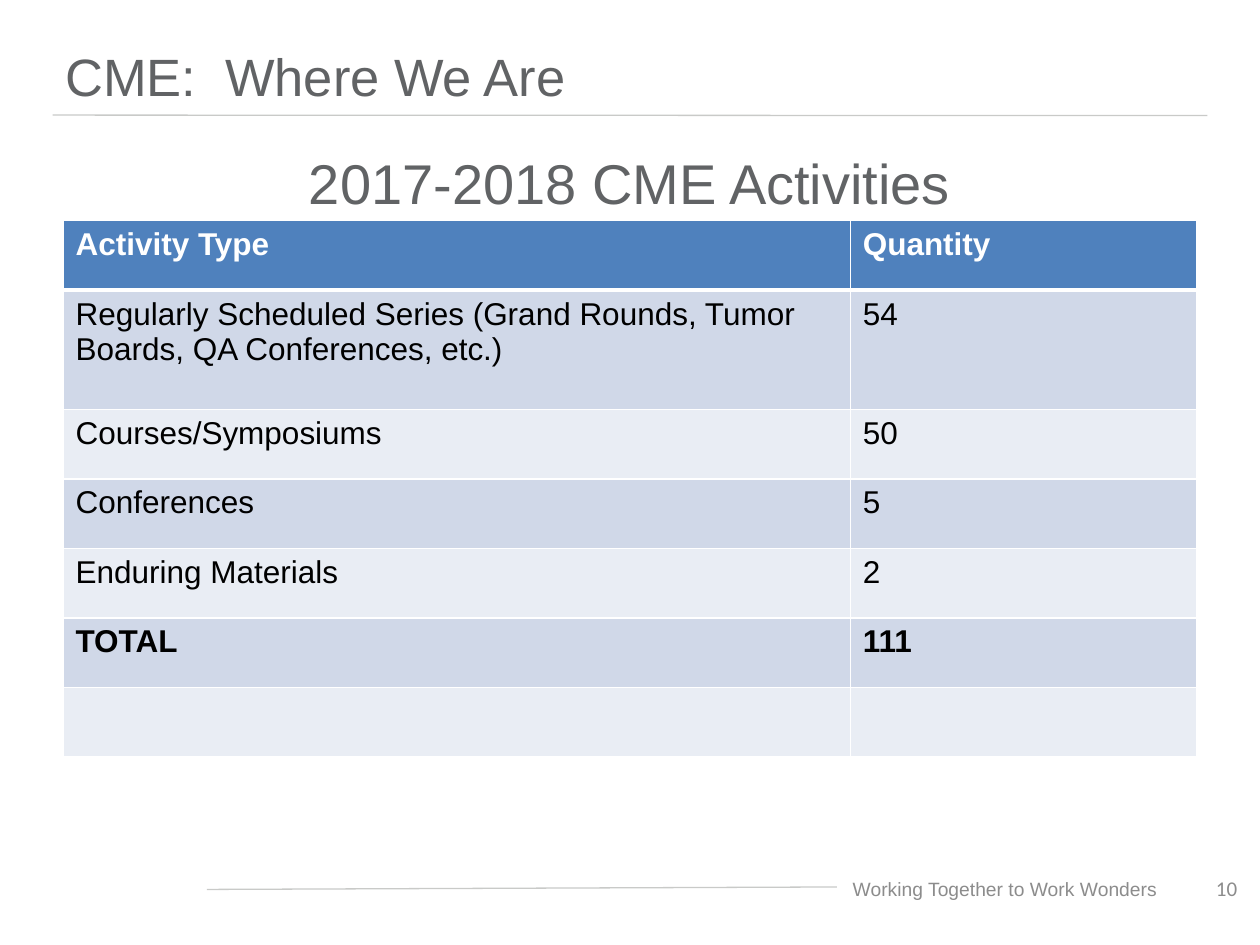
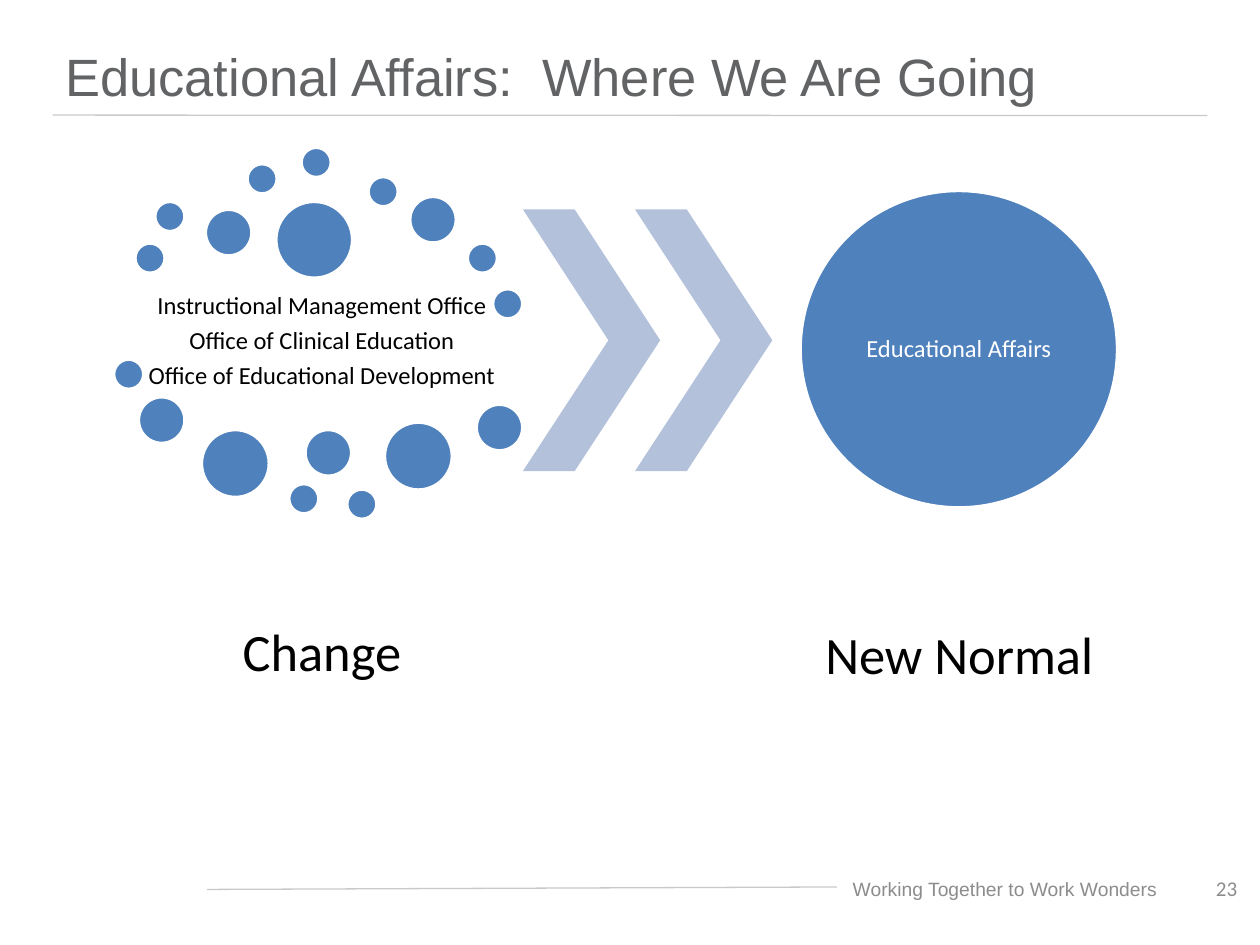
from lxml.etree import SubElement
from pptx import Presentation
from pptx.dml.color import RGBColor
from pptx.enum.shapes import MSO_CONNECTOR as Connector, MSO_SHAPE as Shape
from pptx.enum.text import MSO_ANCHOR as Anchor, MSO_AUTO_SIZE as AutoSize, PP_ALIGN as Align
from pptx.oxml.ns import qn
from pptx.util import Cm, Pt

WHITE = RGBColor(0xFF, 0xFF, 0xFF)
BLACK = RGBColor(0x00, 0x00, 0x00)
BLUE = RGBColor(0x4F, 0x81, 0xBD)
PALE_BLUE = RGBColor(0xB3, 0xC1, 0xDB)
DARK_BAND = RGBColor(0xD0, 0xD8, 0xE8)
LIGHT_BAND = RGBColor(0xE9, 0xED, 0xF4)
TITLE_GREY = RGBColor(0x61, 0x63, 0x65)
FOOTER_GREY = RGBColor(0x8C, 0x8C, 0x8C)
RULE_GREY = RGBColor(0xC9, 0xCA, 0xC8)


def write(frame, lines, size, color, font="Arial", align=Align.LEFT, bold=False):
    frame.word_wrap = True
    for index, line in enumerate(lines):
        para = frame.paragraphs[0] if index == 0 else frame.add_paragraph()
        para.alignment = align
        span = para.add_run()
        span.text = line
        span.font.name, span.font.size, span.font.bold = font, Pt(size), bold
        span.font.color.rgb = color


def add_disc(page, left, top, size):
    disc = page.shapes.add_shape(Shape.OVAL, Cm(left), Cm(top), Cm(size), Cm(size))
    disc.shadow.inherit = False
    disc.fill.solid()
    disc.fill.fore_color.rgb = BLUE
    disc.line.color.rgb = WHITE
    disc.line.width = Pt(2)


deck = Presentation()
deck.slide_width, deck.slide_height = Cm(25.4), Cm(19.05)

# Shared title, rules and footer
pages = []
for heading, number in [("CME:  Where We Are", "10"),
                        ("Educational Affairs:  Where We Are Going", "23")]:
    page = deck.slides.add_slide(deck.slide_layouts[5])
    pages.append(page)

    title = page.shapes.title
    title.left, title.top, title.width, title.height = Cm(1.06), Cm(0.64), Cm(23.28), Cm(1.27)
    title.text_frame.auto_size = AutoSize.NONE
    title.text_frame.vertical_anchor = Anchor.TOP
    title.text_frame.margin_top = Cm(0.25)
    write(title.text_frame, [heading], 30, TITLE_GREY)

    for x1, y1, x2, y2 in [(1.06, 2.32, 24.34, 2.33), (4.17, 17.93, 16.87, 17.88)]:
        rule = page.shapes.add_connector(Connector.STRAIGHT, Cm(x1), Cm(y1), Cm(x2), Cm(y2))
        rule.line.color.rgb = RULE_GREY
        rule.line.width = Pt(0.75)
        SubElement(rule._element.spPr, qn("a:effectLst"))

    for left, width, text, size, font, align in [
            (16.94, 7.82, "Working Together to Work Wonders", 11, "Arial", Align.LEFT),
            (23.29, 1.9, number, 12, "Calibri", Align.RIGHT)]:
        box = page.shapes.add_textbox(Cm(left), Cm(17.4), Cm(width), Cm(1.02))
        box.text_frame.vertical_anchor = Anchor.MIDDLE
        write(box.text_frame, [text], size, FOOTER_GREY, font, align)

activities_page, future_page = pages

# Activities: subtitle
subtitle = activities_page.shapes.add_textbox(Cm(1.27), Cm(2.74), Cm(22.86), Cm(3.18))
subtitle.text_frame.margin_top = Cm(0.25)
write(subtitle.text_frame, ["2017-2018 CME Activities"], 32, TITLE_GREY, align=Align.CENTER)

# Activities: table
activities = [
    ("Activity Type", "Quantity"),
    ("Regularly Scheduled Series (Grand Rounds, Tumor Boards, QA Conferences, etc.)", "54"),
    ("Courses/Symposiums", "50"),
    ("Conferences", "5"),
    ("Enduring Materials", "2"),
    ("TOTAL", "111"),
    ("", ""),
]
table = activities_page.shapes.add_table(
    len(activities), 2, Cm(1.27), Cm(4.45), Cm(22.86), Cm(10.8)).table
table.columns[0].width, table.columns[1].width = Cm(15.87), Cm(6.99)
for row, texts in enumerate(activities):
    table.rows[row].height = Cm(2.41 if row == 1 else 1.4)
    for column, text in enumerate(texts):
        cell = table.cell(row, column)
        properties = cell._tc.get_or_add_tcPr()
        for side in ("lnL", "lnR", "lnT", "lnB"):
            thick = (row, side) in [(0, "lnB"), (1, "lnT")]
            border = SubElement(properties, qn(f"a:{side}"), w=str(Pt(3 if thick else 1)))
            paint = SubElement(border, qn("a:solidFill"))
            SubElement(paint, qn("a:srgbClr"), val=str(WHITE))
        cell.fill.solid()
        cell.fill.fore_color.rgb = BLUE if row == 0 else DARK_BAND if row % 2 else LIGHT_BAND
        if text:
            write(cell.text_frame, [text], 18, WHITE if row == 0 else BLACK,
                  bold=row == 0 or texts[0] == "TOTAL")

# Future: scattered discs around the offices, grouped by diameter
scattered_discs = {
    0.61: [(2.72, 4.9), (3.12, 4.06), (4.98, 3.3), (6.07, 2.97), (7.42, 3.56),
           (9.42, 4.9), (9.93, 5.82), (2.29, 7.24), (5.82, 9.75), (6.99, 9.86)],
    0.94: [(4.14, 4.22), (8.26, 3.96), (2.79, 8), (6.15, 8.66), (9.6, 8.15)],
    1.37: [(4.06, 8.66), (7.75, 8.51)],
    1.55: [(5.56, 4.06)],
}
for size, places in scattered_discs.items():
    for left, top in places:
        add_disc(future_page, left, top, size)

# Future: chevrons leading to the single large disc
for left in (10.54, 12.8):
    chevron = future_page.shapes.add_shape(Shape.CHEVRON, Cm(left), Cm(4.22), Cm(2.77), Cm(5.28))
    chevron.adjustments[0] = 0.623
    chevron.shadow.inherit = False
    chevron.fill.solid()
    chevron.fill.fore_color.rgb = PALE_BLUE
    chevron.line.fill.background()
add_disc(future_page, 16.13, 3.84, 6.4)

# Future: labels
offices = ["Instructional Management Office", "Office of Clinical Education",
           "Office of Educational Development"]
for left, top, width, height, inset, lines, size, color in [
        (2.72, 5.64, 7.54, 2.49, 0.05, offices, 14, BLACK),
        (2.72, 10.87, 7.54, 4.65, 0.1, ["Change"], 30, BLACK),
        (17.07, 4.78, 4.52, 4.52, 0, ["Educational Affairs"], 14, WHITE),
        (15.57, 10.93, 7.54, 4.65, 0.1, ["New Normal"], 30, BLACK)]:
    label = future_page.shapes.add_textbox(Cm(left), Cm(top), Cm(width), Cm(height))
    frame = label.text_frame
    frame.vertical_anchor = Anchor.MIDDLE
    frame.margin_left = frame.margin_right = frame.margin_top = frame.margin_bottom = Cm(inset)
    write(frame, lines, size, color, "Calibri", Align.CENTER)
    for para in frame.paragraphs:
        para.line_spacing = 0.9
        para.space_after = Pt(round(size * 0.35))

deck.save("out.pptx")
